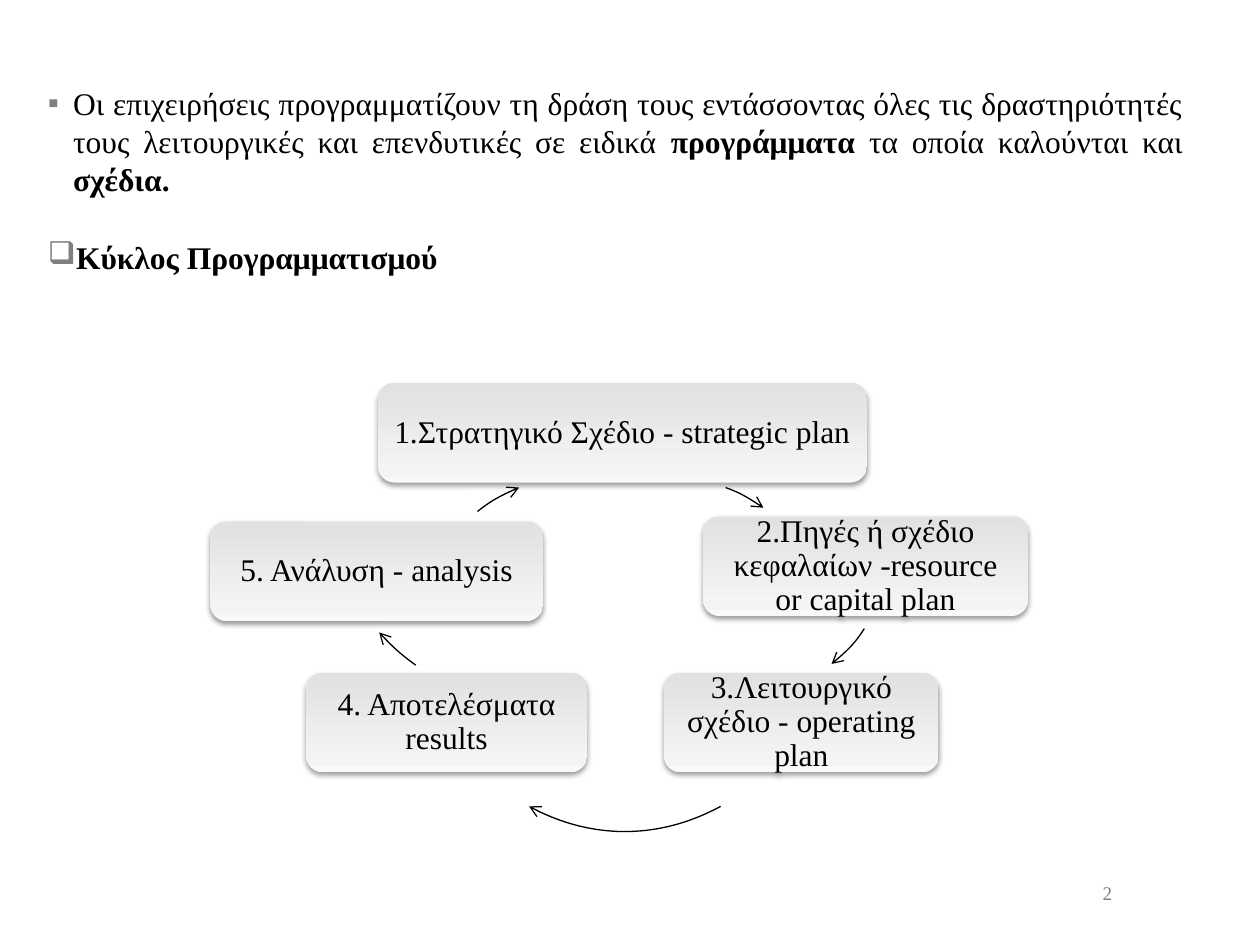
from lxml.etree import SubElement
from copy import deepcopy
from pptx import Presentation
from pptx.dml.color import RGBColor
from pptx.enum.shapes import MSO_SHAPE
from pptx.enum.text import MSO_ANCHOR, PP_ALIGN
from pptx.oxml.ns import qn
from pptx.util import Inches, Pt

FONT = "Times New Roman"
COLORS = {
    "text": "000000",
    "muted": "808080",
    "box_bottom": "F9F9F9",
    "box_middle": "F4F4F4",
    "box_top": "E1E1E1",
}
BULLETS = [
    ("▪", FONT, 0, [
        ("Οι επιχειρήσεις προγραμματίζουν τη δράση τους εντάσσοντας όλες τις "
         "δραστηριότητές τους λειτουργικές και επενδυτικές σε ειδικά ", False),
        ("προγράμματα", True),
        (" τα οποία καλούνται και ", False),
        ("σχέδια.", True),
    ]),
    ("q", "Wingdings", 23, [("Κύκλος Προγραμματισμού", True)]),
]
BOX_HEIGHT = 0.79
STEPS = [
    ("1.Στρατηγικό Σχέδιο - strategic plan", 3, 3.04, 3.88),
    ("2.Πηγές ή σχέδιο κεφαλαίων -resource or capital plan", 5.58, 4.1, 2.58),
    ("3.Λειτουργικό σχέδιο - operating plan", 5.27, 5.34, 2.18),
    ("4. Αποτελέσματα results", 2.43, 5.34, 2.23),
    ("5. Ανάλυση - analysis", 1.67, 4.14, 2.64),
]
CIRCLE_SIZE = 3.16
ARROWS = [
    (3.58, 3.75, [(5.76, 3.87), (5.87, 3.91), (5.97, 3.97), (6.06, 4.03)]),
    (4.02, 2.47, [(6.86, 4.99), (6.79, 5.1), (6.7, 5.19), (6.6, 5.27)]),
    (3.38, 3.44, [(5.72, 6.4), (5.24, 6.66), (4.67, 6.66), (4.2, 6.4)]),
    (2.62, 2.4, [(3.3, 5.28), (3.19, 5.2), (3.1, 5.12), (3.01, 5.02)]),
    (3.14, 3.75, [(3.79, 4.06), (3.89, 3.98), (4, 3.92), (4.12, 3.87)]),
]


def color(name):
    return RGBColor.from_string(COLORS[name])


def format_run(run, size=18, color_name="text", bold=False):
    run.font.name = FONT
    run.font.size = Pt(size)
    run.font.bold = bold
    run.font.color.rgb = color(color_name)


def set_margins(text_frame, horizontal, vertical):
    text_frame.margin_left = text_frame.margin_right = Inches(horizontal)
    text_frame.margin_top = text_frame.margin_bottom = Inches(vertical)


def set_bullet(paragraph, character, font_name):
    properties = paragraph._p.get_or_add_pPr()
    properties.set("marL", str(Inches(0.2)))
    properties.set("indent", str(Inches(-0.2)))
    bullet_color = SubElement(properties, qn("a:buClr"))
    SubElement(bullet_color, qn("a:srgbClr"), val=COLORS["muted"])
    SubElement(properties, qn("a:buFont"), typeface=font_name)
    SubElement(properties, qn("a:buChar"), char=character)


def fill_body(body):
    body.left, body.top = Inches(0.28), Inches(0.44)
    body.width, body.height = Inches(9.21), Inches(2.2)
    text_frame = body.text_frame
    text_frame.vertical_anchor = MSO_ANCHOR.TOP
    set_margins(text_frame, 0.1, 0.23)
    for index, (character, font_name, space_before, pieces) in enumerate(BULLETS):
        paragraph = text_frame.add_paragraph() if index else text_frame.paragraphs[0]
        paragraph.alignment = PP_ALIGN.JUSTIFY
        paragraph.space_before = Pt(space_before)
        set_bullet(paragraph, character, font_name)
        for text, bold in pieces:
            run = paragraph.add_run()
            run.text = text
            format_run(run, bold=bold)


def set_gradient(shape):
    shape.fill.gradient()
    shape.fill.gradient_angle = 90
    stop_list = shape._element.spPr.find(qn("a:gradFill")).find(qn("a:gsLst"))
    stop_list.insert(1, deepcopy(stop_list[0]))
    stops = zip(shape.fill.gradient_stops,
                [(0, "box_bottom"), (0.12, "box_middle"), (1, "box_top")])
    for stop, (position, color_name) in stops:
        stop.position = position
        stop.color.rgb = color(color_name)


def add_shadow(shape):
    shape.shadow.inherit = False
    effects = shape._element.spPr.find(qn("a:effectLst"))
    shadow = SubElement(effects, qn("a:outerShdw"), blurRad=str(Pt(3.1)),
                        dist=str(Pt(1.6)), dir="5400000", rotWithShape="0")
    shadow_color = SubElement(shadow, qn("a:srgbClr"), val=COLORS["text"])
    SubElement(shadow_color, qn("a:alpha"), val="38000")


def add_step(slide, text, left, top, width):
    shape = slide.shapes.add_shape(MSO_SHAPE.ROUNDED_RECTANGLE, Inches(left), Inches(top),
                                   Inches(width), Inches(BOX_HEIGHT))
    set_gradient(shape)
    shape.line.fill.background()
    add_shadow(shape)
    text_frame = shape.text_frame
    text_frame.word_wrap = True
    text_frame.vertical_anchor = MSO_ANCHOR.MIDDLE
    set_margins(text_frame, 0.07, 0.07)
    text_frame.text = text
    paragraph = text_frame.paragraphs[0]
    paragraph.alignment = PP_ALIGN.CENTER
    paragraph.line_spacing = 0.9
    format_run(paragraph.runs[0])


def add_curved_arrow(slide, left, top, points):
    start, *others = [(Inches(x - left), Inches(y - top)) for x, y in points]
    builder = slide.shapes.build_freeform(*start)
    builder.add_line_segments(others, close=False)
    shape = builder.convert_to_shape()
    outline = next(shape._element.iter(qn("a:path")))
    segments = outline.findall(qn("a:lnTo"))
    curve = SubElement(outline, qn("a:cubicBezTo"))
    for segment in segments:
        curve.append(segment[0])
        outline.remove(segment)
    for node, (x, y) in zip(outline.iter(qn("a:pt")), [start, *others]):
        node.set("x", str(x))
        node.set("y", str(y))
    size = Inches(CIRCLE_SIZE)
    outline.set("w", str(size))
    outline.set("h", str(size))
    shape.left, shape.top = Inches(left), Inches(top)
    shape.width = shape.height = size
    shape.shadow.inherit = False
    shape.fill.background()
    shape.line.color.rgb = color("text")
    shape.line.width = Pt(0.75)
    SubElement(shape.line._get_or_add_ln(), qn("a:tailEnd"), type="arrow")


def add_slide_number(slide, number):
    box = slide.shapes.add_textbox(Inches(8.5), Inches(7), Inches(0.58), Inches(0.17))
    text_frame = box.text_frame
    text_frame.word_wrap = True
    text_frame.vertical_anchor = MSO_ANCHOR.MIDDLE
    set_margins(text_frame, 0, 0)
    text_frame.text = number
    paragraph = text_frame.paragraphs[0]
    paragraph.alignment = PP_ALIGN.CENTER
    format_run(paragraph.runs[0], size=11, color_name="muted")


def main():
    presentation = Presentation()
    presentation.slide_width, presentation.slide_height = Inches(10), Inches(7.5)
    slide = presentation.slides.add_slide(presentation.slide_layouts[1])
    title = slide.shapes.title._element
    title.getparent().remove(title)
    fill_body(slide.placeholders[1])
    add_slide_number(slide, "2")
    for step, arrow in zip(STEPS, ARROWS):
        add_step(slide, *step)
        add_curved_arrow(slide, *arrow)
    presentation.save("out.pptx")


if __name__ == "__main__":
    main()
